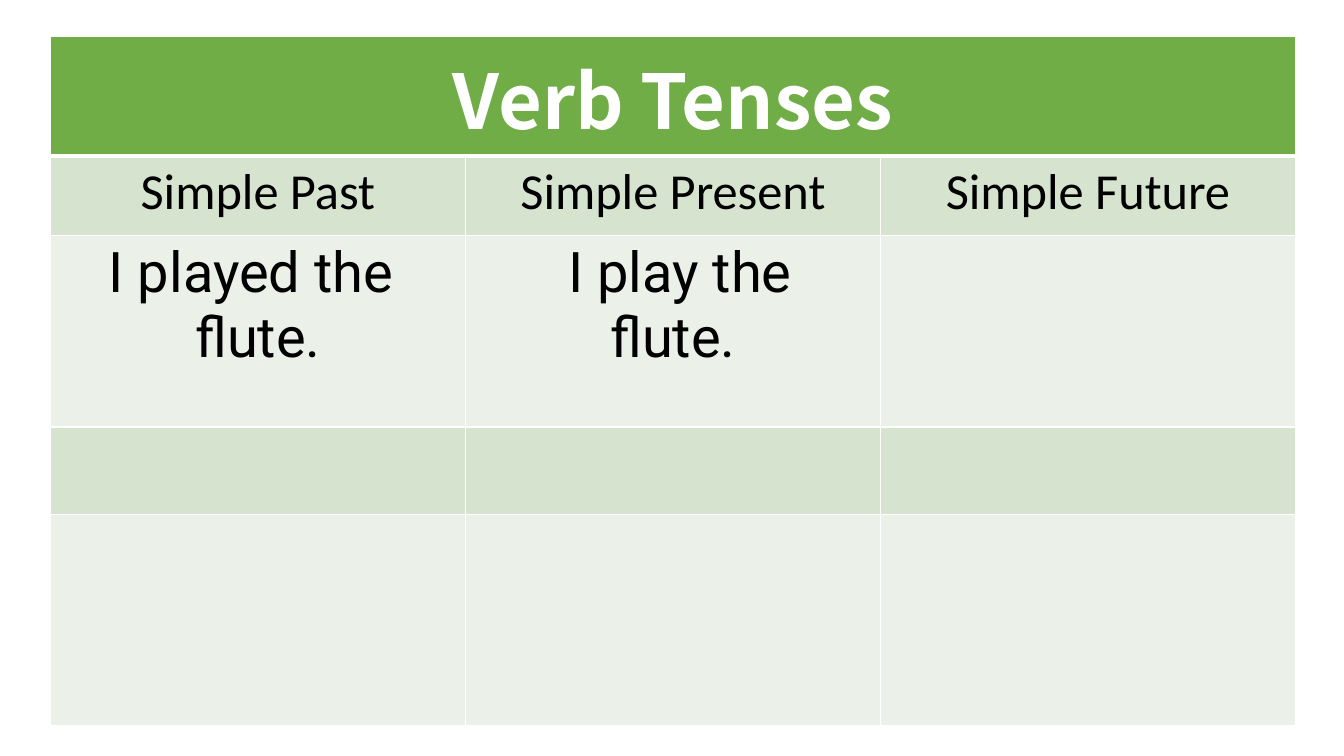
from dataclasses import dataclass

from lxml.etree import SubElement
from pptx import Presentation
from pptx.dml.color import RGBColor
from pptx.enum.text import PP_ALIGN
from pptx.oxml.ns import qn
from pptx.util import Inches, Pt


@dataclass(frozen=True)
class TextStyle:
    font: str
    size: int
    color: str = "000000"
    bold: bool = False


@dataclass(frozen=True)
class Theme:
    title: TextStyle = TextStyle("Noto Sans CJK JP", 54, "FFFFFF", True)
    tense: TextStyle = TextStyle("Calibri", 36)
    example: TextStyle = TextStyle("Roboto", 40)
    header_fill: str = "70AD47"
    bands: tuple = ("D5E3CF", "EBF1E9")
    border: str = "FFFFFF"


THEME = Theme()
ROW_HEIGHTS = (1.13, 0.79, 1.9, 0.87, 2.09)
TENSES = ("Simple Past", "Simple Present", "Simple Future")
EXAMPLES = ("I played the \nflute.", " I play the\nflute.")


def set_borders(cell, bottom_width):
    properties = cell._tc.get_or_add_tcPr()
    for side in ("L", "R", "T", "B"):
        width = bottom_width if side == "B" else 1
        line = SubElement(properties, qn(f"a:ln{side}"), w=str(Pt(width)))
        fill = SubElement(line, qn("a:solidFill"))
        SubElement(fill, qn("a:srgbClr"), val=THEME.border)


def style_cell(cell, fill, bottom_width=1):
    set_borders(cell, bottom_width)
    cell.fill.solid()
    cell.fill.fore_color.rgb = RGBColor.from_string(fill)


def write_cell(cell, text, style):
    cell.text_frame.text = text
    for paragraph in cell.text_frame.paragraphs:
        paragraph.alignment = PP_ALIGN.CENTER
        paragraph.font.name = style.font
        paragraph.font.size = Pt(style.size)
        paragraph.font.bold = style.bold
        paragraph.font.color.rgb = RGBColor.from_string(style.color)


def add_tense_table(slide, left, top, width):
    frame = slide.shapes.add_table(
        len(ROW_HEIGHTS), len(TENSES),
        Inches(left), Inches(top), Inches(width), Inches(sum(ROW_HEIGHTS)),
    )
    table = frame.table
    table.first_row = False
    table.horz_banding = False
    for row, height in zip(table.rows, ROW_HEIGHTS):
        row.height = Inches(height)

    for row_index in range(len(ROW_HEIGHTS)):
        for column_index in range(len(TENSES)):
            cell = table.cell(row_index, column_index)
            if row_index == 0:
                style_cell(cell, THEME.header_fill, bottom_width=3)
            else:
                style_cell(cell, THEME.bands[(row_index - 1) % 2])

    title_cell = table.cell(0, 0)
    title_cell.merge(table.cell(0, len(TENSES) - 1))
    write_cell(title_cell, "Verb Tenses", THEME.title)
    for row_index, texts, style in (
        (1, TENSES, THEME.tense),
        (2, EXAMPLES, THEME.example),
    ):
        for column_index, text in enumerate(texts):
            write_cell(table.cell(row_index, column_index), text, style)


def main():
    deck = Presentation()
    deck.slide_width, deck.slide_height = Inches(13.33), Inches(7.5)
    slide = deck.slides.add_slide(deck.slide_layouts[6])
    add_tense_table(slide, left=0.5, top=0.36, width=12.35)
    deck.save("out.pptx")


if __name__ == "__main__":
    main()
